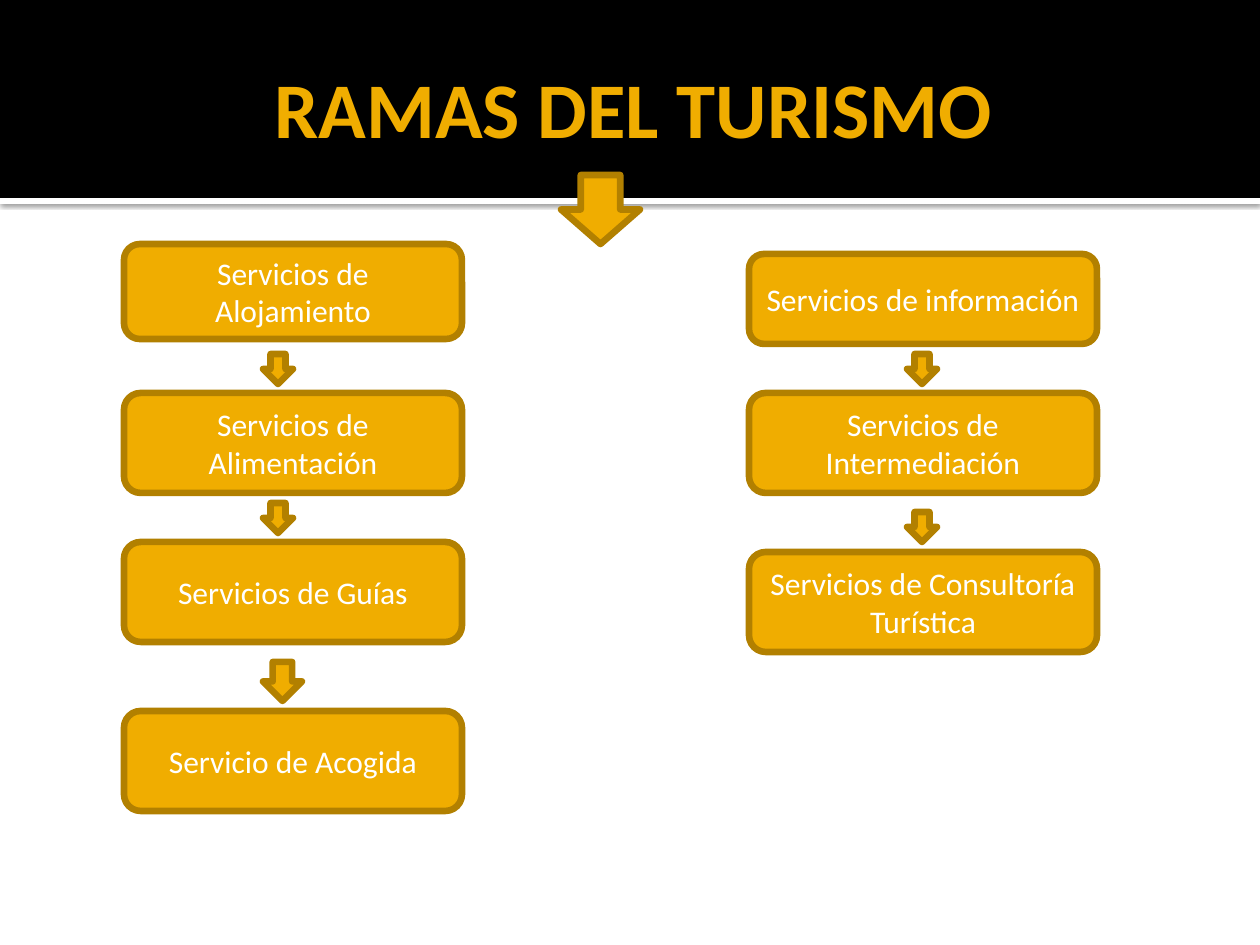
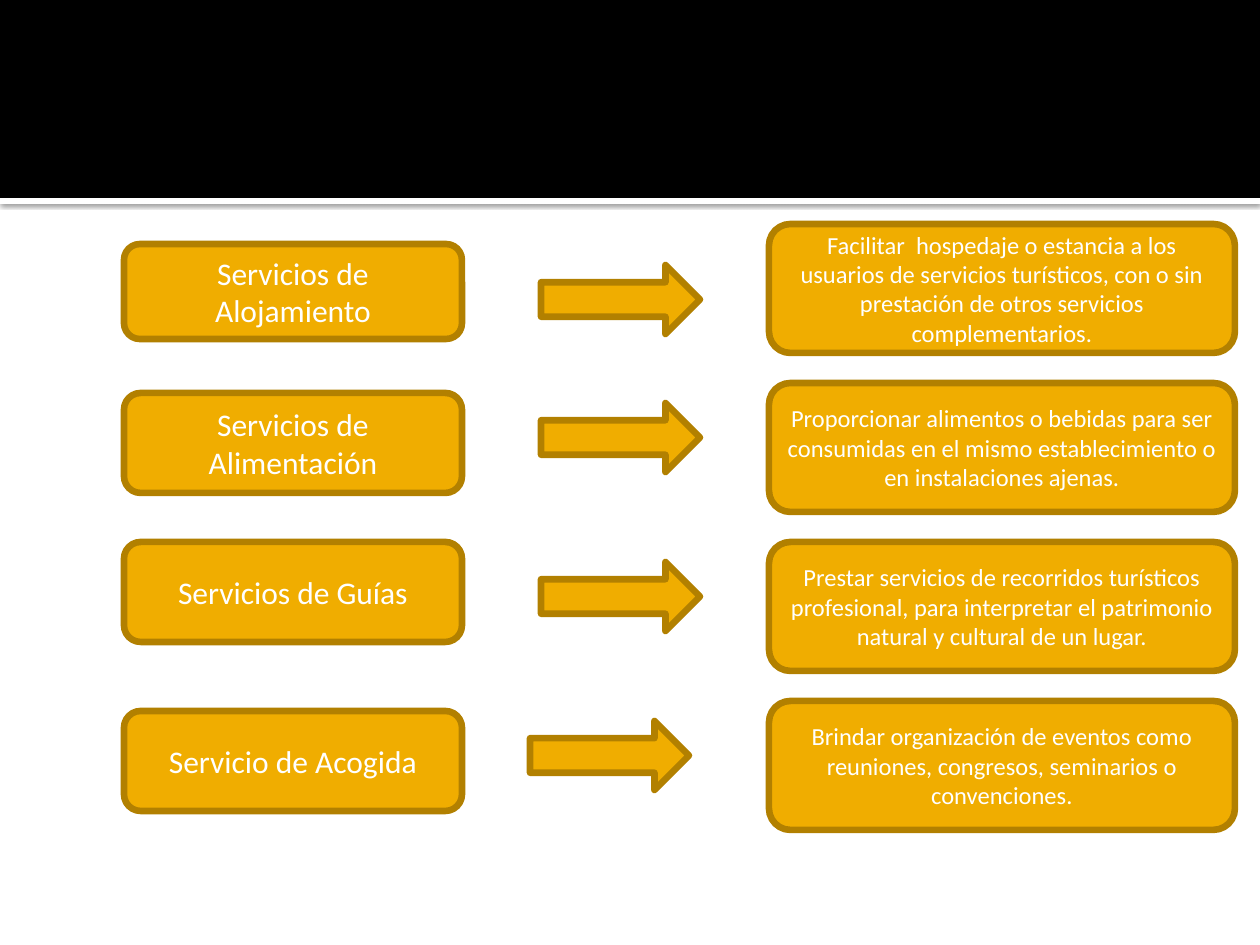
from lxml import etree
from pptx import Presentation
from pptx.dml.color import RGBColor
from pptx.enum.shapes import MSO_SHAPE as Shape
from pptx.enum.text import MSO_ANCHOR as Anchor, PP_ALIGN as Align
from pptx.oxml.ns import qn
from pptx.util import Emu, Pt

PX_PER_INCH = 126
SLIDE_WIDTH, SLIDE_HEIGHT = 1260, 945
BAND_HEIGHT, RULE_HEIGHT = 198, 6
TITLE_ONLY, BLANK = 5, 6

AMBER = RGBColor(0xF0, 0xAD, 0x00)
DARK_AMBER = RGBColor(0xB2, 0x80, 0x00)
WHITE = RGBColor(0xFF, 0xFF, 0xFF)
BLACK = RGBColor(0x00, 0x00, 0x00)
FONT = "Calibri"

MAIN_LEFT, MAIN_WIDTH = 124, 338
MAIN_SERVICES = [
    ("Servicios de Alojamiento", 244, 95),
    ("Servicios de Alimentación", 393, 100),
    ("Servicios de Guías", 542, 100),
    ("Servicio de Acogida", 711, 100),
]
OTHER_LEFT, OTHER_WIDTH = 749, 348
OTHER_SERVICES = [
    ("Servicios de información", 254, 90),
    ("Servicios de Intermediación", 393, 100),
    ("Servicios de Consultoría Turística", 552, 100),
]
DOWN_ARROWS = [
    (561, 175, 79, 69),
    (263, 354, 30, 30),
    (263, 503, 30, 30),
    (263, 662, 39, 39),
    (907, 354, 30, 30),
    (907, 512, 30, 30),
]
RIGHT_ARROWS = [(541, 265), (541, 403), (541, 562), (530, 721)]
DESCRIPTIONS = [
    "Facilitar  hospedaje o estancia a los usuarios de servicios turísticos, "
    "con o sin prestación de otros servicios complementarios.",
    "Proporcionar alimentos o bebidas para ser consumidas en el mismo "
    "establecimiento o en instalaciones ajenas.",
    "Prestar servicios de recorridos turísticos profesional, para interpretar "
    "el patrimonio natural y cultural de un lugar.",
    "Brindar organización de eventos como reuniones, congresos, seminarios o "
    "convenciones.",
]


def px(length):
    return Emu(round(length * 914400 / PX_PER_INCH))


def write_text(shape, text, size=18, color=WHITE, bold=False):
    frame = shape.text_frame
    frame.word_wrap = True
    frame.vertical_anchor = Anchor.MIDDLE
    paragraph = frame.paragraphs[0]
    paragraph.alignment = Align.CENTER
    run = paragraph.add_run()
    run.text = text
    run.font.name = FONT
    run.font.size = Pt(size)
    run.font.bold = bold
    run.font.color.rgb = color


def add_block(slide, kind, left, top, width, height, fill=AMBER, outline=DARK_AMBER):
    shape = slide.shapes.add_shape(kind, px(left), px(top), px(width), px(height))
    shape.shadow.inherit = False
    shape.fill.solid()
    shape.fill.fore_color.rgb = fill
    if outline is None:
        shape.line.fill.background()
    else:
        shape.line.color.rgb = outline
        shape.line.width = Pt(3.78)
        line = shape.element.spPr.find(qn("a:ln"))
        etree.SubElement(line, qn("a:round"))
    return shape


def add_box(slide, text, left, top, width, height, size=18):
    box = add_block(slide, Shape.FLOWCHART_ALTERNATE_PROCESS, left, top, width, height)
    write_text(box, text, size=size)


def add_services(slide, services, left, width):
    for text, top, height in services:
        add_box(slide, text, left, top, width, height)


def add_drop_shadow(shape):
    effects = shape.element.spPr.find(qn("a:effectLst"))
    shadow = etree.SubElement(
        effects, qn("a:outerShdw"), blurRad=str(Pt(2.5)), dist=str(Pt(0.8)),
        dir="5400000", algn="t", rotWithShape="0")
    color = etree.SubElement(shadow, qn("a:srgbClr"), val=str(BLACK))
    etree.SubElement(color, qn("a:alpha"), val="60000")


def add_master_band(presentation, slide):
    rule = add_block(slide, Shape.RECTANGLE, 0, BAND_HEIGHT, SLIDE_WIDTH, RULE_HEIGHT,
                     fill=WHITE, outline=None)
    add_drop_shadow(rule)
    band = add_block(slide, Shape.RECTANGLE, 0, 0, SLIDE_WIDTH, BAND_HEIGHT,
                     fill=BLACK, outline=None)
    master_tree = presentation.slide_master.shapes.element
    for position, shape in enumerate((rule, band)):
        shape.element.nvSpPr.cNvPr.set("id", str(101 + position))
        master_tree.insert(2 + position, shape.element)


def set_title(slide, text):
    title = slide.shapes.title
    title.left, title.top, title.width, title.height = map(px, (63, 21, 1134, 173))
    title.text_frame.margin_right = Pt(3.6)
    write_text(title, text, size=45, color=AMBER, bold=True)


def build_branches(slide):
    set_title(slide, "RAMAS DEL TURISMO")
    add_services(slide, MAIN_SERVICES, MAIN_LEFT, MAIN_WIDTH)
    add_services(slide, OTHER_SERVICES, OTHER_LEFT, OTHER_WIDTH)
    for bounds in DOWN_ARROWS:
        add_block(slide, Shape.DOWN_ARROW, *bounds)


def build_descriptions(slide):
    add_services(slide, MAIN_SERVICES, MAIN_LEFT, MAIN_WIDTH)
    for left, top in RIGHT_ARROWS:
        add_block(slide, Shape.RIGHT_ARROW, left, top, 159, 69)
    for row, text in enumerate(DESCRIPTIONS):
        add_box(slide, text, 769, 224 + 159 * row, 466, 129, size=14)


def main():
    presentation = Presentation()
    presentation.slide_width = px(SLIDE_WIDTH)
    presentation.slide_height = px(SLIDE_HEIGHT)
    layouts = presentation.slide_layouts
    branches = presentation.slides.add_slide(layouts[TITLE_ONLY])
    add_master_band(presentation, branches)
    build_branches(branches)
    build_descriptions(presentation.slides.add_slide(layouts[BLANK]))
    presentation.save("out.pptx")


if __name__ == "__main__":
    main()
